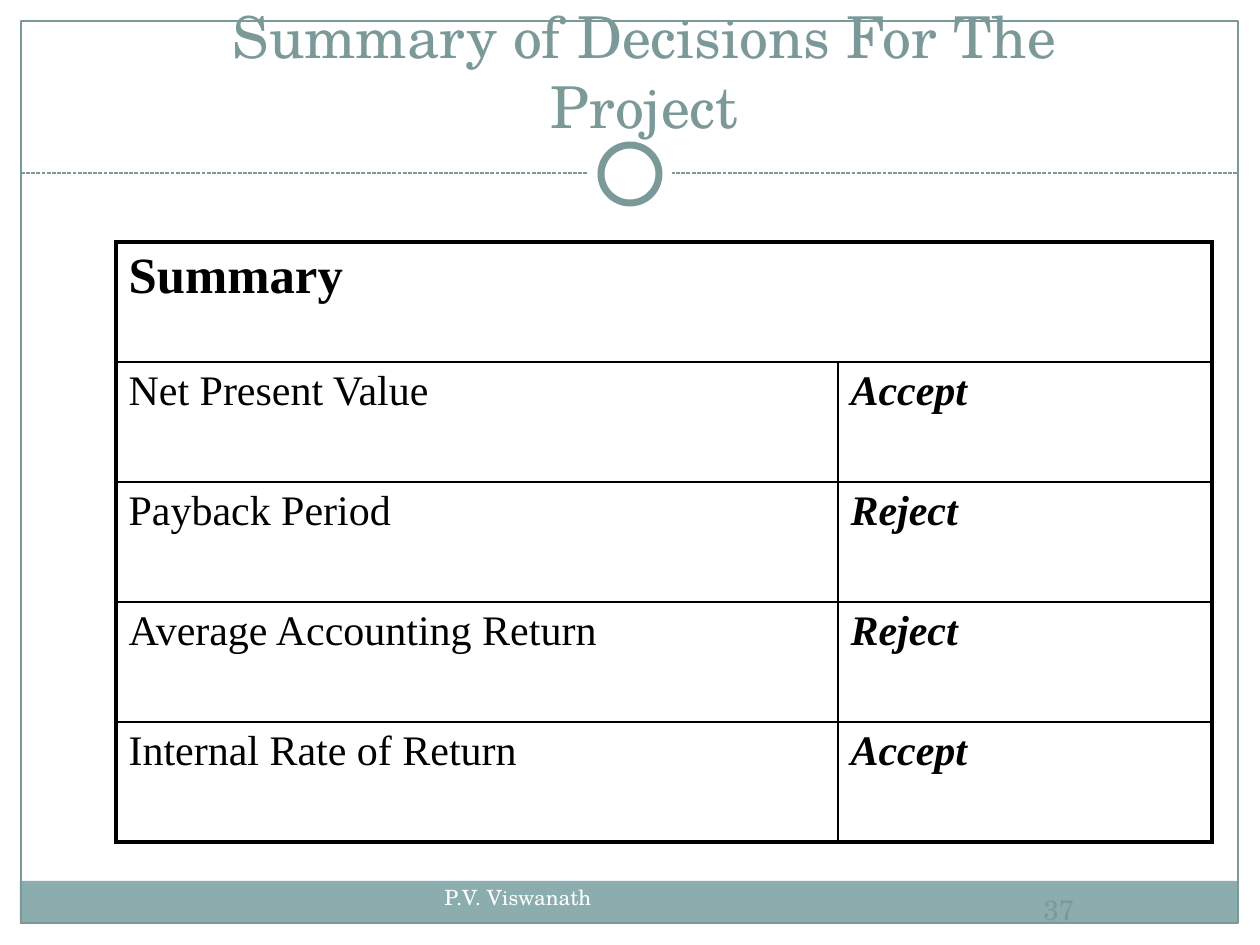
from lxml.etree import SubElement
from pptx import Presentation
from pptx.dml.color import RGBColor
from pptx.enum.dml import MSO_LINE
from pptx.enum.shapes import MSO_CONNECTOR, MSO_SHAPE
from pptx.enum.text import MSO_ANCHOR, PP_ALIGN
from pptx.oxml.ns import qn
from pptx.util import Emu, Pt

EMU_PER_PX = 914400 // 126
WHITE = RGBColor(0xFF, 0xFF, 0xFF)
BLACK = RGBColor(0x00, 0x00, 0x00)
TEAL = RGBColor(0x7C, 0x99, 0x9A)
BAND = RGBColor(0x8C, 0xAD, 0xAE)
SCHOLA = "TeX Gyre Schola"
TIMES = "Times New Roman"
THICK, THIN = 2.25, 1

DECISIONS = [
    ("Net Present Value", "Accept"),
    ("Payback Period", "Reject"),
    ("Average Accounting Return", "Reject"),
    ("Internal Rate of Return", "Accept"),
]


def px(n):
    return Emu(n * EMU_PER_PX)


def box(*lengths):
    return [px(n) for n in lengths]


def write(tf, text, size, color, font=SCHOLA, bold=False, italic=False,
          align=PP_ALIGN.LEFT):
    p = tf.paragraphs[0]
    p.alignment = align
    r = p.add_run()
    r.text = text
    r.font.name, r.font.size = font, Pt(size)
    r.font.bold, r.font.italic = bold, italic
    r.font.color.rgb = color


def add_text(s, at, text, size, color, anchor=MSO_ANCHOR.TOP, **fmt):
    tf = s.shapes.add_textbox(*box(*at)).text_frame
    tf.word_wrap = True
    tf.vertical_anchor = anchor
    write(tf, text, size, color, **fmt)


def add_shape(s, kind, at, fill=None, line=None, width=0.75):
    sp = s.shapes.add_shape(kind, *box(*at))
    sp.shadow.inherit = False
    if fill is None:
        sp.fill.background()
    else:
        sp.fill.solid()
        sp.fill.fore_color.rgb = fill
    if line is None:
        sp.line.fill.background()
    else:
        sp.line.color.rgb = line
        sp.line.width = Pt(width)


def add_dashed_rule(s, x1, x2, y):
    c = s.shapes.add_connector(MSO_CONNECTOR.STRAIGHT, *box(x1, y, x2, y))
    c.line.color.rgb = TEAL
    c.line.width = Pt(0.75)
    c.line.dash_style = MSO_LINE.SQUARE_DOT
    SubElement(c._element.spPr, qn("a:effectLst"))


def set_borders(cell, **widths):
    """Draw black borders; each keyword is a side (L, R, T, B) in points."""
    tc_pr = cell._tc.get_or_add_tcPr()
    for i, side in enumerate("LRTB"):
        ln = tc_pr.makeelement(qn(f"a:ln{side}"), {"w": str(Pt(widths[side]))})
        fill = SubElement(ln, qn("a:solidFill"))
        SubElement(fill, qn("a:srgbClr"), val=str(BLACK))
        tc_pr.insert(i, ln)


def add_decision_table(s):
    n_rows = len(DECISIONS) + 1
    table = s.shapes.add_table(n_rows, 2, *box(116, 242, 1096, 599)).table
    table.first_row = table.horz_banding = False
    for col, width in zip(table.columns, (722, 374)):
        col.width = px(width)
    for i, row in enumerate(table.rows):
        row.height = px(120)
        for j, cell in enumerate(row.cells):
            cell.fill.background()
            set_borders(cell,
                        L=THICK if j == 0 else THIN,
                        R=THICK if j == 1 or i == 0 else THIN,
                        T=THICK if i == 0 else THIN,
                        B=THICK if i == n_rows - 1 else THIN)
    table.cell(0, 0).merge(table.cell(0, 1))
    write(table.cell(0, 0).text_frame, "Summary", 29, BLACK, font=TIMES, bold=True)
    for i, (rule, decision) in enumerate(DECISIONS, start=1):
        write(table.cell(i, 0).text_frame, rule, 24, BLACK, font=TIMES)
        write(table.cell(i, 1).text_frame, decision, 24, BLACK, font=TIMES,
              bold=True, italic=True)


def add_frame(s):
    add_shape(s, MSO_SHAPE.RECTANGLE, (20, 881, 1217, 43), fill=BAND)
    add_shape(s, MSO_SHAPE.RECTANGLE, (21, 21, 1217, 902), line=TEAL)
    add_dashed_rule(s, 21, 1238, 173)
    add_shape(s, MSO_SHAPE.OVAL, (588, 132, 84, 84), fill=WHITE)
    add_shape(s, MSO_SHAPE.OVAL, (601, 145, 58, 58), fill=WHITE, line=TEAL, width=4)


def main():
    prs = Presentation()
    prs.slide_width, prs.slide_height = box(1260, 945)
    s = prs.slides.add_slide(prs.slide_layouts[6])
    add_frame(s)
    add_text(s, (432, 878, 426, 63), "P.V. Viswanath", 12, WHITE)
    add_text(s, (908, 878, 302, 63), "37", 16, TEAL,
             anchor=MSO_ANCHOR.MIDDLE, align=PP_ALIGN.CENTER)
    add_text(s, (136, 42, 1017, 104), "Summary of Decisions For The Project", 33,
             TEAL, anchor=MSO_ANCHOR.BOTTOM, align=PP_ALIGN.CENTER)
    add_decision_table(s)
    prs.save("out.pptx")


if __name__ == "__main__":
    main()
